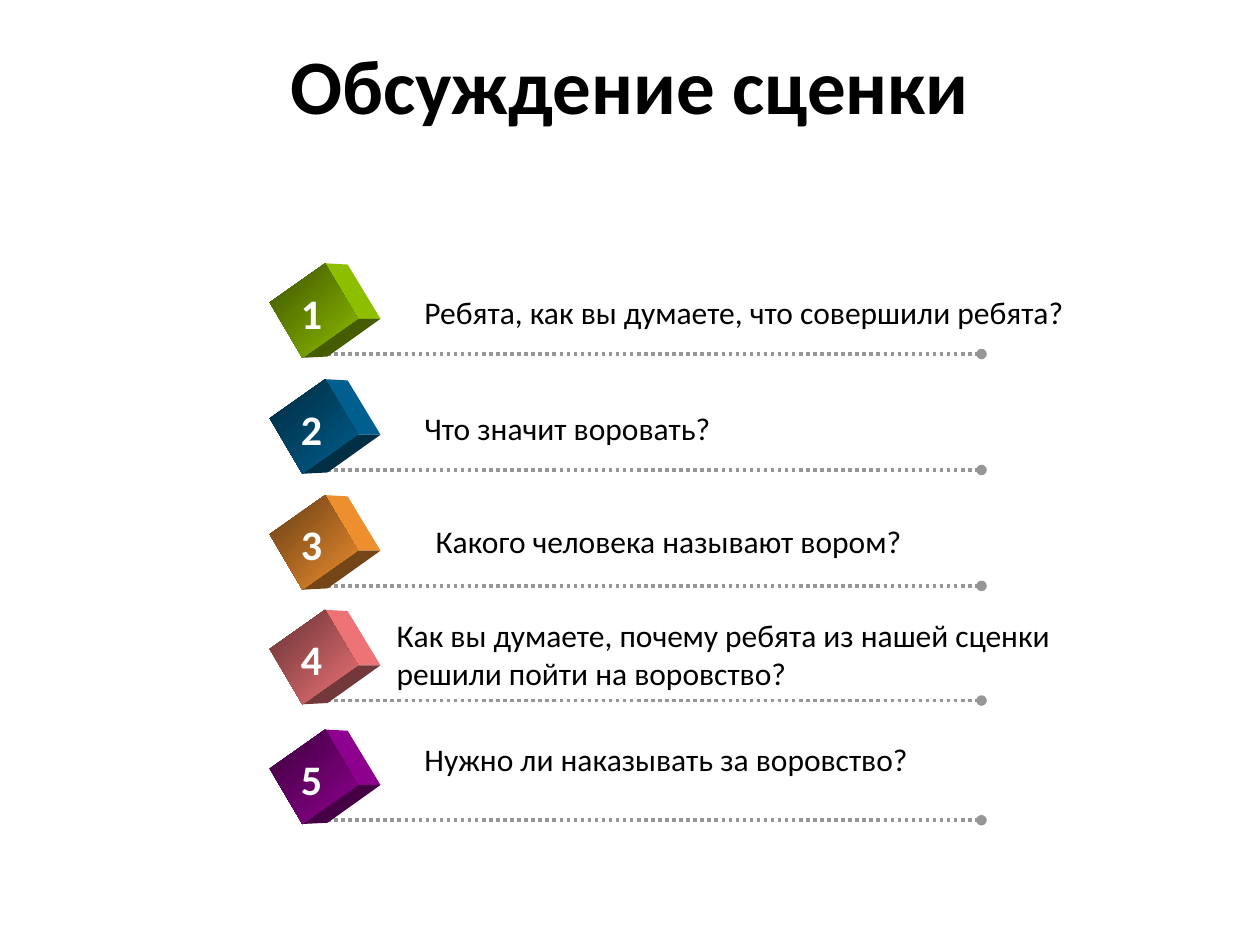
from pptx import Presentation
from pptx.dml.color import RGBColor as RGB
from pptx.enum.dml import MSO_LINE as Dash
from pptx.enum.shapes import MSO_CONNECTOR as Link
from pptx.enum.text import MSO_ANCHOR as Anchor, PP_ALIGN as Align
from pptx.oxml.ns import qn
from pptx.util import Inches, Pt
from lxml.etree import SubElement as Sub

BLACK = RGB(0x00, 0x00, 0x00)
WHITE = RGB(0xFF, 0xFF, 0xFF)
GREY = RGB(0x96, 0x96, 0x96)
GREEN = RGB(0x99, 0xCC, 0x00)
BLUE = RGB(0x00, 0x66, 0x99)
ORANGE = RGB(0xFF, 0x99, 0x33)
PINK = RGB(0xFF, 0x7C, 0x80)
PURPLE = RGB(0x99, 0x00, 0x99)

FRONT = [(2.14, -0.41), (2.58, -0.72), (2.84, -0.28), (2.4, 0.03)]
SIDE = [(2.58, -0.72), (2.76, -0.71), (3.02, -0.28), (2.84, -0.28)]
BASE = [(2.84, -0.28), (3.02, -0.28), (2.6, 0.02), (2.4, 0.03)]

ITEMS = [
    (2.81, GREEN, "Ребята, как вы думаете, что совершили ребята?", (3.27, 2.28, 6.02, 0.4)),
    (3.73, BLUE, "Что значит воровать?", (3.27, 3.2, 4.52, 0.4)),
    (4.65, ORANGE, "Какого человека называют вором?", (3.36, 4.09, 3.94, 0.81)),
    (5.56, PINK, "Как вы думаете, почему ребята из нашей сценки решили пойти на воровство?",
     (3.05, 4.84, 5.68, 1.11)),
    (6.51, PURPLE, "Нужно ли наказывать за воровство?", (3.27, 5.82, 4.08, 0.81)),
]


def shade(color, part):
    return RGB(*(round(c * part) for c in color))


class Deck:
    """Holds the text style, the slide and the group being filled."""

    def __init__(self):
        self.prs = Presentation()
        self.prs.slide_width, self.prs.slide_height = Inches(10), Inches(7.5)
        self.slide = self.prs.slides.add_slide(self.prs.slide_layouts[5])
        self.face = "Calibri"
        self.group = None

    def style(self, para, size, color, bold):
        font = para.font
        font.name, font.size, font.bold = self.face, Pt(size), bold
        font.color.rgb = color

    def title(self, text, box):
        shape = self.slide.shapes.title
        shape.left, shape.top, shape.width, shape.height = map(Inches, box)
        frame = shape.text_frame
        frame.text = text
        frame.vertical_anchor = Anchor.MIDDLE
        para = frame.paragraphs[0]
        para.alignment, para.line_spacing = Align.CENTER, 0.9
        self.style(para, 44, BLACK, True)

    def text(self, text, box, size, color, bold=False):
        frame = self.group.add_textbox(*map(Inches, box)).text_frame
        frame.word_wrap = True
        frame.text = text
        self.style(frame.paragraphs[0], size, color, bold)

    def rule(self, y):
        line = self.group.add_connector(
            Link.STRAIGHT, *map(Inches, (2.54, y, 7.79, y)))
        line.line.color.rgb = GREY
        line.line.width = Pt(2)
        line.line.dash_style = Dash.ROUND_DOT
        props = line._element.spPr
        Sub(props.find(qn("a:ln")), qn("a:tailEnd"), type="oval")
        Sub(props, qn("a:effectLst"))

    def facet(self, points, y):
        dots = [(Inches(x), Inches(y + dy)) for x, dy in points]
        pen = self.group.build_freeform(*dots[0], scale=1.0)
        pen.add_line_segments(dots[1:], close=True)
        shape = pen.convert_to_shape()
        shape.shadow.inherit = False
        shape.line.fill.background()
        return shape.fill

    def cube(self, y, color):
        for points, part in ((SIDE, 0.93), (BASE, 0.45)):
            fill = self.facet(points, y)
            fill.solid()
            fill.fore_color.rgb = shade(color, part)
        fill = self.facet(FRONT, y)
        fill.gradient()
        fill.gradient_angle = 315
        for stop, part in zip(fill.gradient_stops, (0.4, 0.93)):
            stop.color.rgb = shade(color, part)

    def item(self, num, y, color, text, box):
        self.group = self.slide.shapes.add_group_shape().shapes
        self.rule(y)
        self.cube(y, color)
        self.text(text, box, 18, BLACK)
        self.text(str(num), (2.29, y - 0.58, 0.39, 0.5), 24, WHITE, True)


def main():
    deck = Deck()
    deck.title("Обсуждение сценки", (0.69, 0.13, 8.62, 1.16))
    for num, item in enumerate(ITEMS, 1):
        deck.item(num, *item)
    deck.prs.save("out.pptx")


if __name__ == "__main__":
    main()
